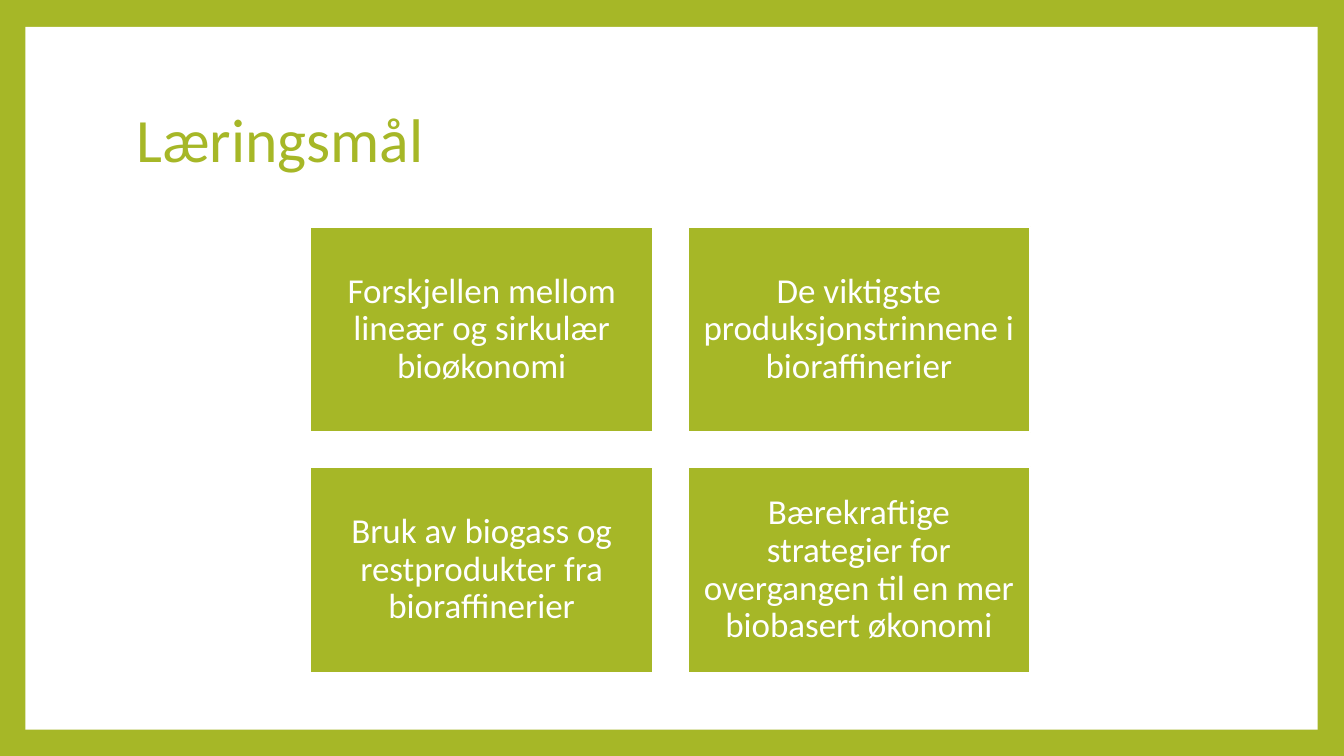
from pptx import Presentation
from pptx.dml.color import RGBColor
from pptx.enum.shapes import MSO_SHAPE
from pptx.enum.text import MSO_ANCHOR, PP_ALIGN
from pptx.util import Cm, Pt

COLORS = {"green": "A6B727", "white": "FFFFFF"}
FONT = "Calibri"
GOALS = [
    "Forskjellen mellom lineær og sirkulær bioøkonomi",
    "De viktigste produksjonstrinnene i bioraffinerier",
    "Bruk av biogass og restprodukter fra bioraffinerier",
    "Bærekraftige strategier for overgangen til en mer biobasert økonomi",
]


def color(name):
    return RGBColor.from_string(COLORS[name])


def write(shape, text, size, tint, align):
    frame = shape.text_frame
    frame.word_wrap = True
    frame.vertical_anchor = MSO_ANCHOR.MIDDLE
    frame.text = text
    para = frame.paragraphs[0]
    para.alignment = align
    para.line_spacing = 0.9
    para.font.name = FONT
    para.font.size = Pt(size)
    para.font.color.rgb = color(tint)


def add_rect(slide, box, fill):
    rect = slide.shapes.add_shape(MSO_SHAPE.RECTANGLE, *map(Cm, box))
    rect.shadow.inherit = False
    rect.fill.solid()
    rect.fill.fore_color.rgb = color(fill)
    return rect


def add_frame(slide, box):
    """Green backdrop with a white panel behind everything else."""
    back = slide.background.fill
    back.solid()
    back.fore_color.rgb = color("green")
    panel = add_rect(slide, box, "white")
    panel.line.fill.background()
    slide.shapes._spTree.insert(2, panel._element)


def add_title(slide, box, text):
    title = slide.shapes.title
    title.left, title.top, title.width, title.height = map(Cm, box)
    write(title, text, 44, "green", PP_ALIGN.LEFT)


def add_goals(slide, box, goals, cols=2, gap=0.87):
    """Grid of equal tiles filling the box."""
    left, top, width, height = box
    rows = -(-len(goals) // cols)
    wide = (width - gap * (cols - 1)) / cols
    high = (height - gap * (rows - 1)) / rows
    for i, goal in enumerate(goals):
        row, col = divmod(i, cols)
        place = (left + col * (wide + gap), top + row * (high + gap), wide, high)
        tile = add_rect(slide, place, "green")
        tile.line.color.rgb = color("white")
        tile.line.width = Pt(1.5)
        frame = tile.text_frame
        frame.margin_left = frame.margin_right = Cm(0.25)
        frame.margin_top = frame.margin_bottom = Cm(0.25)
        write(tile, goal, 25, "white", PP_ALIGN.CENTER)


def main():
    deck = Presentation()
    deck.slide_width, deck.slide_height = Cm(33.87), Cm(19.05)
    slide = deck.slides.add_slide(deck.slide_layouts[5])  # title only
    add_frame(slide, (0.64, 0.68, 32.57, 17.71))
    add_title(slide, (3.18, 1.7, 27.43, 3.76), "Læringsmål")
    add_goals(slide, (7.82, 5.71, 18.14, 11.24), GOALS)
    deck.save("out.pptx")


if __name__ == "__main__":
    main()
